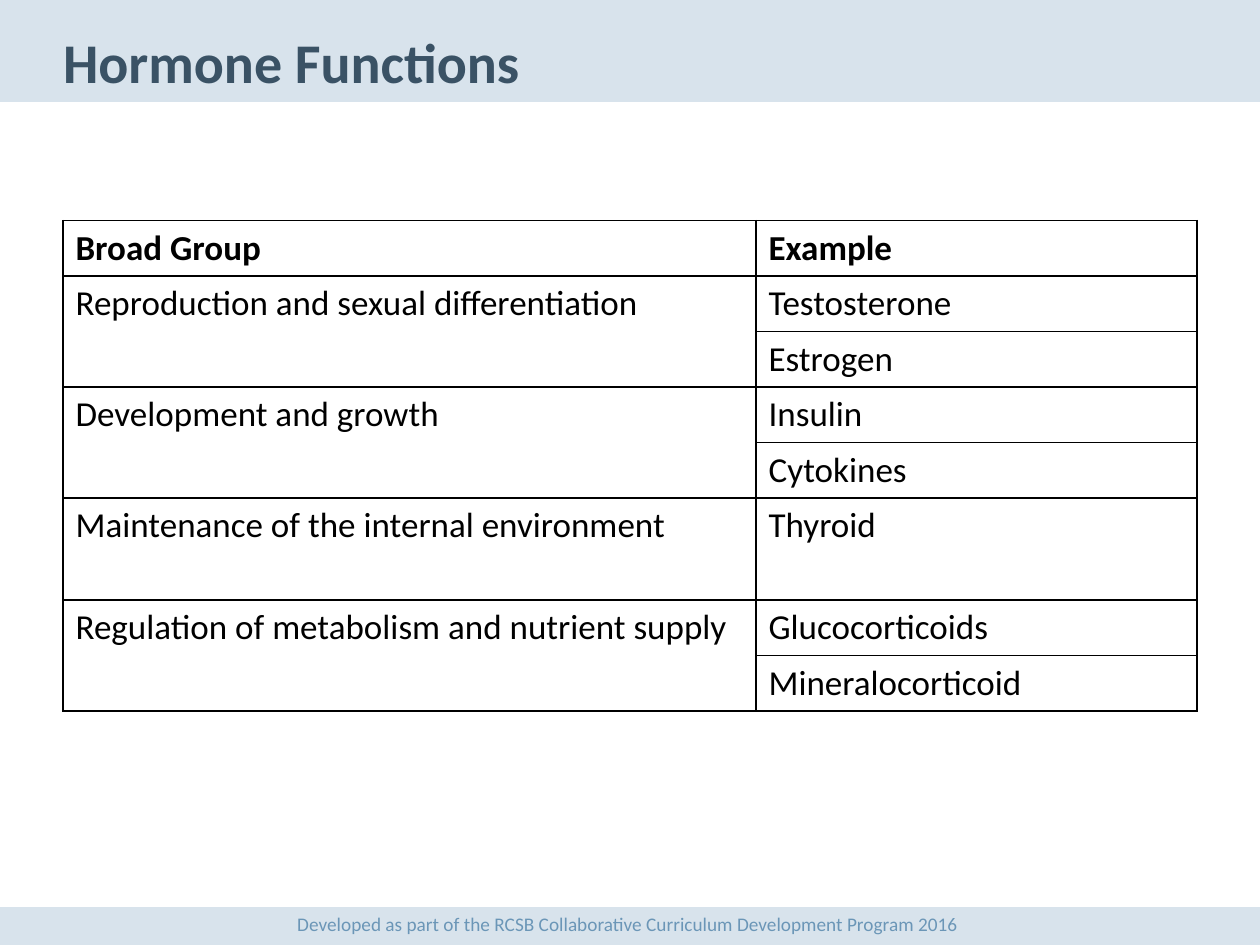
from typing import NamedTuple

from lxml.etree import SubElement
from pptx import Presentation
from pptx.dml.color import RGBColor
from pptx.enum.shapes import MSO_SHAPE
from pptx.enum.text import MSO_ANCHOR, PP_ALIGN
from pptx.oxml import parse_xml
from pptx.oxml.ns import nsdecls, qn
from pptx.util import Inches, Pt

FONT = "Calibri"
BLUE, NAVY, BLACK = "6B96B7", "3A5265", "000000"
ROW_HEIGHT = 0.41


class Band(NamedTuple):
    top: float
    height: float


class HormoneGroup(NamedTuple):
    function: str
    examples: list[str]


BANDS = [Band(7.2, 0.31), Band(0, 0.81)]
GROUPS = [
    HormoneGroup("Reproduction and sexual differentiation", ["Testosterone", "Estrogen"]),
    HormoneGroup("Development and growth", ["Insulin", "Cytokines"]),
    HormoneGroup("Maintenance of the internal environment", ["Thyroid"]),
    HormoneGroup("Regulation of metabolism and nutrient supply",
                 ["Glucocorticoids", "Mineralocorticoid"]),
]


def color(value: str) -> RGBColor:
    return RGBColor.from_string(value)


def write(frame, text: str, size: float, hue: str, bold: bool = False,
          align: PP_ALIGN = PP_ALIGN.LEFT) -> None:
    paragraph = frame.paragraphs[0]
    paragraph.alignment = align
    run = paragraph.add_run()
    run.text = text
    run.font.name = FONT
    run.font.size = Pt(size)
    run.font.bold = bold
    run.font.color.rgb = color(hue)


def draw_band(slide, band: Band, layer: int) -> None:
    strip = slide.shapes.add_shape(MSO_SHAPE.RECTANGLE, 0, Inches(band.top),
                                   Inches(10), Inches(band.height))
    strip.shadow.inherit = False
    strip.fill.solid()
    strip.fill.fore_color.rgb = color(BLUE)
    strip.line.fill.background()
    tint = strip.fill._xPr.find(qn("a:solidFill"))[0]
    SubElement(tint, qn("a:alpha"), val="26000")
    # Keep the bands behind the title
    slide.shapes._spTree.insert(2 + layer, strip._element)


def style_cell(cell) -> None:
    cell.fill.background()
    properties = cell._tc.get_or_add_tcPr()
    for position, side in enumerate(("lnL", "lnR", "lnT", "lnB")):
        properties.insert(position, parse_xml(
            f'<a:{side} {nsdecls("a")} w="12700"><a:solidFill>'
            f'<a:srgbClr val="{BLACK}"/></a:solidFill></a:{side}>'))


def draw_table(slide) -> None:
    row_count = 1 + sum(len(group.examples) for group in GROUPS)
    table = slide.shapes.add_table(row_count, 2, Inches(0.5), Inches(1.75), Inches(9),
                                   Inches(ROW_HEIGHT * (row_count + 1))).table
    table.horz_banding = False
    for column, width in zip(table.columns, (5.5, 3.5)):
        column.width = Inches(width)
    for row in table.rows:
        row.height = Inches(ROW_HEIGHT)
    for cell in table.iter_cells():
        style_cell(cell)

    for column, heading in enumerate(("Broad Group", "Example")):
        write(table.cell(0, column).text_frame, heading, 20, BLACK, bold=True)

    # Every group is two rows high, merged or as one tall row
    first = 1
    for group in GROUPS:
        last = first + len(group.examples) - 1
        function_cell = table.cell(first, 0)
        if last > first:
            function_cell.merge(table.cell(last, 0))
        else:
            table.rows[first].height = Inches(0.81)
        write(function_cell.text_frame, group.function, 20, BLACK)
        for row, example in enumerate(group.examples, first):
            write(table.cell(row, 1).text_frame, example, 20, BLACK)
        first = last + 1


def main() -> None:
    presentation = Presentation()
    presentation.slide_width, presentation.slide_height = Inches(10), Inches(7.5)
    slide = presentation.slides.add_slide(presentation.slide_layouts[5])

    # Header and footer bands
    for layer, band in enumerate(BANDS):
        draw_band(slide, band, layer)

    # Title
    title = slide.shapes.title
    title.left, title.top = Inches(0.4), Inches(0.16)
    title.width, title.height = Inches(8.93), Inches(0.65)
    title.text_frame.vertical_anchor = MSO_ANCHOR.MIDDLE
    write(title.text_frame, "Hormone Functions", 32, NAVY, bold=True)

    # Hormone table
    draw_table(slide)

    # Footer
    footer = slide.shapes.add_textbox(0, Inches(7.19), Inches(10), Inches(0.29)).text_frame
    footer.word_wrap = True
    footer.vertical_anchor = MSO_ANCHOR.MIDDLE
    write(footer, "Developed as part of the RCSB Collaborative Curriculum "
          "Development Program 2016 ", 11, BLUE, align=PP_ALIGN.CENTER)

    presentation.save("out.pptx")


if __name__ == "__main__":
    main()
